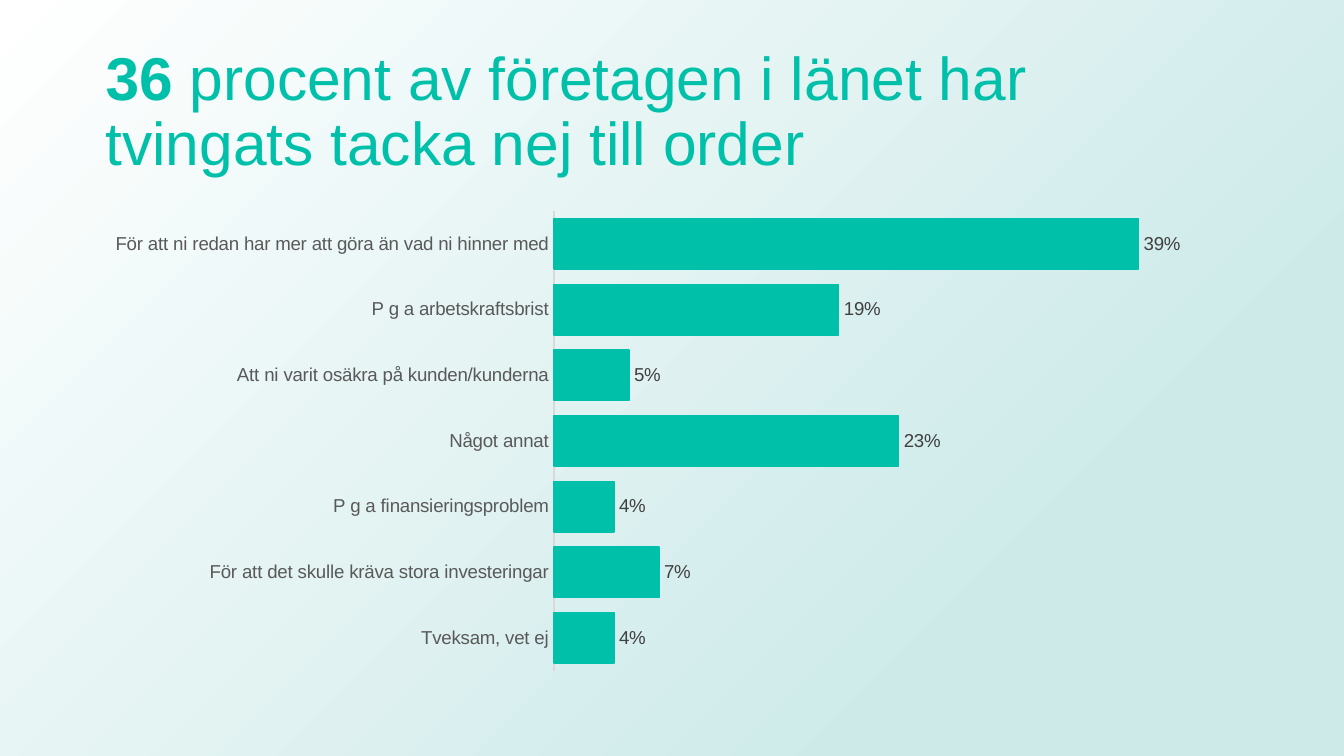
from lxml.etree import SubElement
from pptx import Presentation
from pptx.chart.data import CategoryChartData
from pptx.dml.color import RGBColor
from pptx.enum.chart import XL_CHART_TYPE, XL_LABEL_POSITION, XL_TICK_LABEL_POSITION, XL_TICK_MARK
from pptx.enum.shapes import MSO_SHAPE
from pptx.enum.text import MSO_ANCHOR
from pptx.oxml.ns import qn
from pptx.util import Pt

TEAL = RGBColor(0x00, 0xC0, 0xA9)
MIST = RGBColor(0xCD, 0xEA, 0xE9)
WHITE = RGBColor(0xFF, 0xFF, 0xFF)
BLACK = RGBColor(0x00, 0x00, 0x00)
LABEL_GRAY = RGBColor(0x59, 0x59, 0x59)
VALUE_GRAY = RGBColor(0x40, 0x40, 0x40)
AXIS_GRAY = RGBColor(0xD9, 0xD9, 0xD9)

WIDTH, HEIGHT = Pt(720), Pt(405)
LEFT, CONTENT_WIDTH = Pt(49.5), Pt(621)

TITLE = [("36 ", True), ("procent av företagen i länet har tvingats tacka nej till order", False)]
REASONS = {
    "För att ni redan har mer att göra än vad ni hinner med": 0.39,
    "P g a arbetskraftsbrist": 0.19,
    "Att ni varit osäkra på kunden/kunderna": 0.05,
    "Något annat": 0.23,
    "P g a finansieringsproblem": 0.04,
    "För att det skulle kräva stora investeringar": 0.07,
    "Tveksam, vet ej": 0.04,
}


def set_attrs(obj, **values):
    for name, value in values.items():
        setattr(obj, name, value)


def style_font(font, size, color, name="Arial", bold=False):
    set_attrs(font, size=Pt(size), name=name, bold=bold)
    font.color.rgb = color


def style_line(line, color):
    line.color.rgb = color
    line.width = Pt(0.75)


def add_background(s):
    sp = s.shapes.add_shape(MSO_SHAPE.RECTANGLE, 0, 0, WIDTH, HEIGHT)
    sp.shadow.inherit = False
    sp.line.fill.background()
    sp.fill.gradient()
    for stop, position, color in zip(sp.fill.gradient_stops, (0.23, 1), (MIST, WHITE)):
        stop.position = position
        stop.color.rgb = color
    grad = sp.element.spPr.find(qn("a:gradFill"))
    grad.remove(grad.find(qn("a:lin")))
    circle = SubElement(grad, qn("a:path"), {"path": "circle"})
    SubElement(circle, qn("a:fillToRect"), {"l": "100000", "t": "100000"})


def add_title(s):
    tf = s.shapes.add_textbox(LEFT, Pt(21.5), CONTENT_WIDTH, Pt(78.5)).text_frame
    set_attrs(tf, word_wrap=True, vertical_anchor=MSO_ANCHOR.MIDDLE)
    p = tf.paragraphs[0]
    p.line_spacing = 0.9
    for text, bold in TITLE:
        r = p.add_run()
        r.text = text
        style_font(r.font, 32.4, TEAL, bold=bold)


def add_bar_chart(s):
    data = CategoryChartData(number_format="0%")
    data.categories = list(REASONS)
    data.add_series("Series 1", list(REASONS.values()))
    chart = s.shapes.add_chart(
        XL_CHART_TYPE.BAR_CLUSTERED, LEFT, Pt(108), CONTENT_WIDTH, Pt(256.5), data
    ).chart
    set_attrs(chart, has_legend=False, has_title=False)
    style_font(chart.font, 10, BLACK, "Calibri")

    set_attrs(chart.value_axis, visible=False, has_major_gridlines=False,
              minimum_scale=0, maximum_scale=0.45)
    axis = chart.category_axis
    set_attrs(axis, reverse_order=True, has_major_gridlines=False,
              major_tick_mark=XL_TICK_MARK.NONE, minor_tick_mark=XL_TICK_MARK.NONE,
              tick_label_position=XL_TICK_LABEL_POSITION.NEXT_TO_AXIS)
    style_font(axis.tick_labels.font, 10, LABEL_GRAY)
    style_line(axis.format.line, AXIS_GRAY)

    plot = chart.plots[0]
    set_attrs(plot, gap_width=30, vary_by_categories=False)
    series = plot.series[0]
    series.format.fill.solid()
    series.format.fill.fore_color.rgb = TEAL
    style_line(series.format.line, TEAL)
    labels = series.data_labels
    set_attrs(labels, show_value=True, number_format="0%",
              number_format_is_linked=False, position=XL_LABEL_POSITION.OUTSIDE_END)
    style_font(labels.font, 10, VALUE_GRAY)


def main():
    """Build the slide on declined orders and save it."""
    prs = Presentation()
    set_attrs(prs, slide_width=WIDTH, slide_height=HEIGHT)
    s = prs.slides.add_slide(prs.slide_layouts[6])
    add_background(s)
    add_title(s)
    add_bar_chart(s)
    prs.save("out.pptx")


if __name__ == "__main__":
    main()
